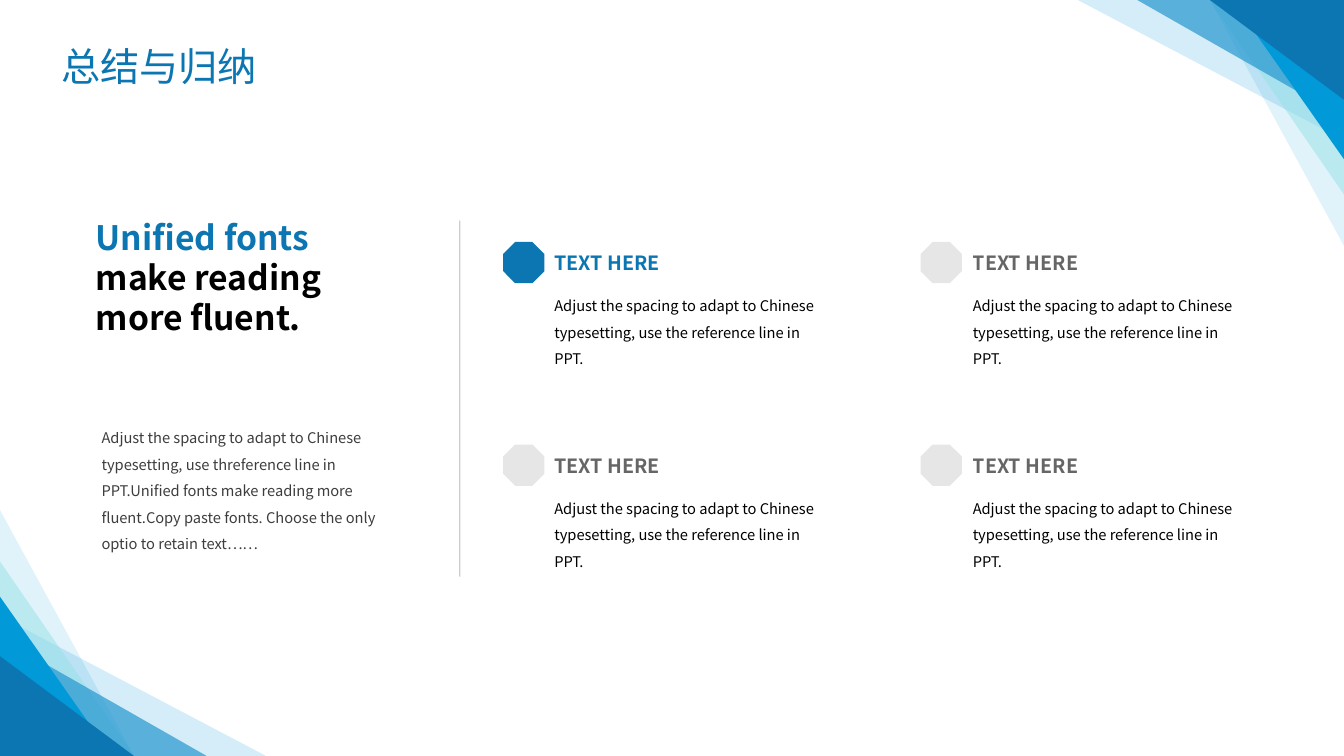
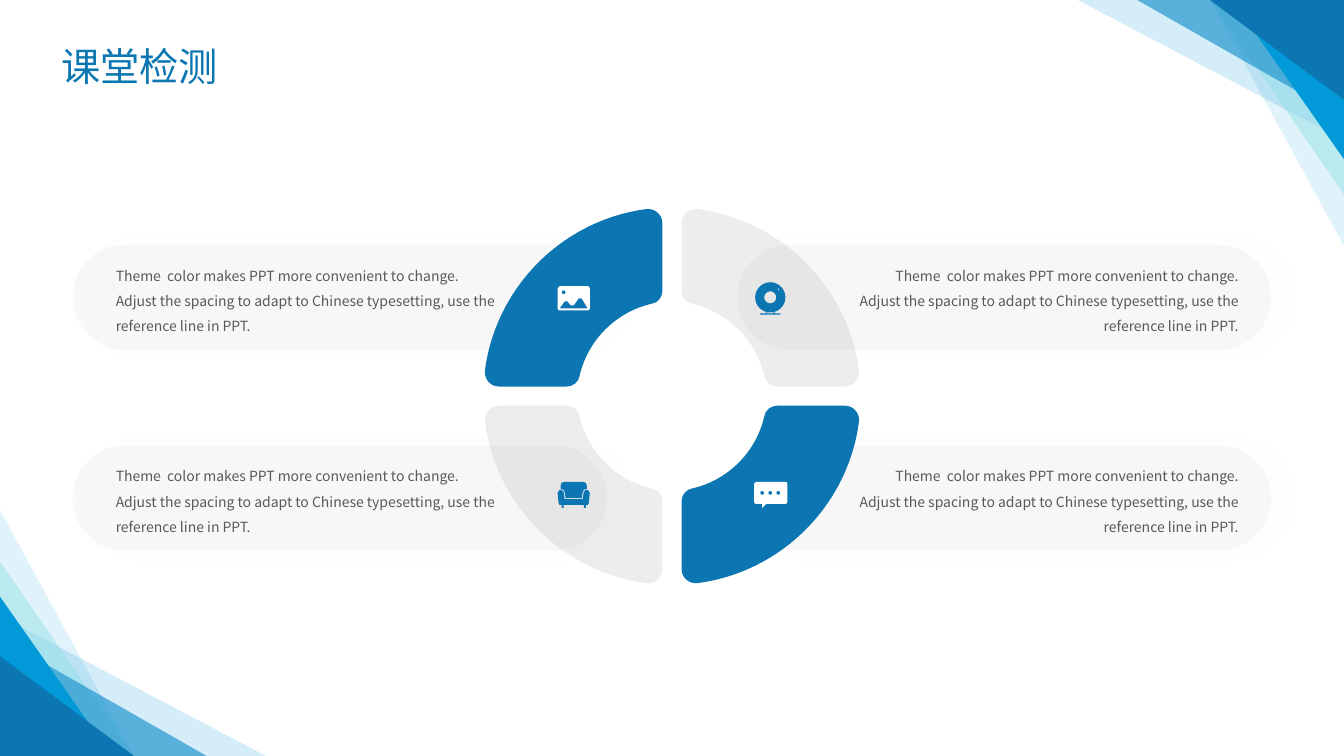
from dataclasses import dataclass
from itertools import product

from lxml import etree
from pptx import Presentation
from pptx.dml.color import RGBColor
from pptx.enum.shapes import MSO_CONNECTOR, MSO_SHAPE
from pptx.enum.text import MSO_AUTO_SIZE, PP_ALIGN
from pptx.oxml.ns import qn
from pptx.util import Inches, Pt

LEFT, RIGHT, JUSTIFY = PP_ALIGN.LEFT, PP_ALIGN.RIGHT, PP_ALIGN.JUSTIFY
TRIANGLE, OCTAGON = MSO_SHAPE.RIGHT_TRIANGLE, MSO_SHAPE.OCTAGON
PILL, STRAIGHT = MSO_SHAPE.ROUNDED_RECTANGLE, MSO_CONNECTOR.STRAIGHT
FIT_SHAPE = MSO_AUTO_SIZE.SHAPE_TO_FIT_TEXT
WIDTH, HEIGHT = 13.33, 7.5


@dataclass(frozen=True)
class Theme:
    """Colours are (hex, opacity in percent); sizes are points."""
    font: str = "Noto Sans CJK SC"
    blue: tuple = ("0C76B2", 100)
    black: tuple = ("000000", 100)
    white: tuple = ("FFFFFF", 100)
    gray_text: tuple = ("595959", 100)
    soft_text: tuple = ("0D0D0D", 80)
    muted_heading: tuple = ("000000", 60)
    muted_mark: tuple = ("0D0D0D", 10)
    rule: tuple = ("0D0D0D", 20)
    pill: tuple = ("808080", 5)
    muted_segment: tuple = ("808080", 14)
    shadow: tuple = ("A6A6A6", 20)
    title: float = 28
    headline: float = 24
    heading: float = 14
    body: float = 10.5
    note: float = 10
    loose: float = 1.5


THEME = Theme()

# Corner triangles, back to front: width, height, colour
CORNER = [
    (1.33, 2.44, ("0299D8", 12)),
    (2.64, 1.39, ("0299D8", 17)),
    (1.33, 1.93, ("95E1E7", 50)),
    (2.05, 1.17, ("2094CE", 68)),
    (1.11, 1.58, ("0299D8", 100)),
    (1.33, 0.99, THEME.blue),
]

SUMMARY = {
    "title": "总结与归纳",
    "headline": [("Unified fonts", THEME.blue),
                 ("make reading more fluent.", THEME.black)],
    "intro": "Adjust the spacing to adapt to Chinese typesetting, use threference "
             "line in PPT.Unified fonts make reading more fluent.Copy paste fonts. "
             "Choose the only optio to retain text……",
    "point": ("TEXT HERE", "Adjust the spacing to adapt to Chinese typesetting, "
                           "use the reference line in PPT."),
}
QUIZ = {
    "title": "课堂检测",
    "note": ["Theme  color makes PPT more convenient to change.",
             "Adjust the spacing to adapt to Chinese typesetting, "
             "use the reference line in PPT."],
}


# A contour is a list of pieces: one point (line) or three points (cubic curve)
def polygon(*points):
    return [[point] for point in points]


def mirrored(*half):
    """Close a left half outline with its reflection across x = 0."""
    return polygon(*half, *[(-x, y) for x, y in reversed(half)])


def rounded(x, y, width, height, radius):
    right, bottom, pull = x + width, y + height, 0.45 * radius
    return [
        [(x + radius, y)],
        [(right - radius, y)],
        [(right - pull, y), (right, y + pull), (right, y + radius)],
        [(right, bottom - radius)],
        [(right, bottom - pull), (right - pull, bottom), (right - radius, bottom)],
        [(x + radius, bottom)],
        [(x + pull, bottom), (x, bottom - pull), (x, bottom - radius)],
        [(x, y + radius)],
        [(x, y + pull), (x + pull, y), (x + radius, y)],
    ]


def circle(x, y, radius):
    outline = rounded(x - radius, y - radius, 2 * radius, 2 * radius, radius)
    return outline[:1] + [piece for piece in outline if len(piece) == 3]


# Lower right ring segment, in inches from its inner corner
SEGMENT = [
    [(0, 0.95)],
    [(0, 1.62)],
    [(0, 1.71), (0.08, 1.77), (0.16, 1.76)],
    [(0.99, 1.65), (1.65, 0.99), (1.76, 0.16)],
    [(1.77, 0.08), (1.71, 0), (1.62, 0)],
    [(0.95, 0)],
    [(0.89, 0), (0.83, 0.04), (0.82, 0.11)],
    [(0.74, 0.46), (0.46, 0.74), (0.11, 0.82)],
    [(0.04, 0.83), (0, 0.89), (0, 0.95)],
]

# Icon outlines, in inches from the centre of each icon
PHOTO = [
    rounded(-0.16, -0.12, 0.32, 0.24, 0.02),
    polygon((-0.14, 0.1), (-0.09, 0.03), (-0.06, 0.03), (-0.03, 0.07), (0, 0.07),
            (0.05, 0), (0.08, 0), (0.14, 0.1)),
    circle(-0.1, -0.06, 0.02),
]
WEBCAM = [
    circle(0, -0.01, 0.15),
    circle(0, -0.01, 0.06),
    circle(0.08, -0.09, 0.01),
    mirrored((-0.1, 0.16), (-0.1, 0.15), (-0.05, 0.15), (-0.04, 0.14),
             (-0.03, 0.14), (-0.04, 0.15)),
]
SOFA = [
    mirrored((-0.1, 0.1), (-0.1, 0.13), (-0.12, 0.13), (-0.12, 0.1), (-0.14, 0.1),
             (-0.15, 0.08), (-0.16, -0.02), (-0.14, -0.05), (-0.12, -0.05),
             (-0.1, -0.03), (-0.09, 0.04)),
    mirrored((-0.08, 0.03), (-0.09, -0.03), (-0.1, -0.05), (-0.13, -0.06),
             (-0.13, -0.09), (-0.12, -0.12), (-0.09, -0.13)),
]
CHAT = [
    rounded(-0.16, -0.13, 0.33, 0.22, 0.02),
    polygon((-0.08, 0.09), (-0.08, 0.13), (-0.04, 0.09)),
    *[circle(x, -0.02, 0.02) for x in (-0.08, 0, 0.08)],
]

# Column, row, segment colour, icon, icon colour
QUADRANTS = [
    (0, 0, THEME.blue, PHOTO, THEME.white),
    (1, 0, THEME.muted_segment, WEBCAM, THEME.blue),
    (0, 1, THEME.muted_segment, SOFA, THEME.blue),
    (1, 1, THEME.blue, CHAT, THEME.white),
]


def paint(fill, element, colour):
    """Fill with a colour and put its opacity on the element's first colour."""
    value, opacity = colour
    fill.solid()
    fill.fore_color.rgb = RGBColor.from_string(value)
    if opacity < 100:
        node = element.find(".//" + qn("a:srgbClr"))
        etree.SubElement(node, qn("a:alpha"), val=str(opacity * 1000))


def finish(shape, colour):
    shape.shadow.inherit = False
    paint(shape.fill, shape.element, colour)
    shape.line.fill.background()
    return shape


def add_preset(page, preset, x, y, width, height, colour):
    shape = page.shapes.add_shape(preset, *map(Inches, (x, y, width, height)))
    return finish(shape, colour)


def bend(shape, contours):
    """Join the three line segments of each curved piece into one cubic curve."""
    segments = iter(list(shape.element.iter(qn("a:lnTo"))))
    for piece in (piece for contour in contours for piece in contour[1:]):
        first, *others = [next(segments) for _ in piece]
        if others:
            first.tag = qn("a:cubicBezTo")
        for other in others:
            first.append(other[0])
            other.getparent().remove(other)


def add_outline(page, contours, x, y, colour, side=1, level=1):
    """Draw closed contours around x, y; side or level -1 reflects them."""
    builder = None
    for contour in contours:
        start, *points = [(Inches(x + side * dx), Inches(y + level * dy))
                          for piece in contour for dx, dy in piece]
        if builder:
            builder.move_to(*start)
        else:
            builder = page.shapes.build_freeform(*start)
        builder.add_line_segments(points, close=True)
    shape = builder.convert_to_shape()
    bend(shape, contours)
    finish(shape, colour)


def add_text(page, lines, x, y, width, height, *, size, colour=THEME.black,
             bold=False, align=LEFT, spacing=None):
    """Lines are strings, or (string, colour) pairs, one for each paragraph."""
    box = page.shapes.add_textbox(*map(Inches, (x, y, width, height)))
    frame = box.text_frame
    frame.word_wrap = True
    frame.auto_size = FIT_SHAPE
    for i, line in enumerate(lines):
        text, line_colour = (line, colour) if isinstance(line, str) else line
        para = frame.add_paragraph() if i else frame.paragraphs[0]
        para.alignment = align
        para.line_spacing = spacing
        span = para.add_run()
        span.text = text
        span.font.size, span.font.bold = Pt(size), bold
        span.font.name = THEME.font
        paint(span.font.fill, span._r, line_colour)
        etree.SubElement(span._r.rPr, qn("a:ea"), typeface=THEME.font)


def add_title(page, text):
    add_text(page, [text], 0.51, 0.37, 2.32, 0.57, size=THEME.title,
             colour=THEME.blue, align=JUSTIFY)


def add_rule(page, x, top, bottom):
    rule = page.shapes.add_connector(STRAIGHT, *map(Inches, (x, top, x, bottom)))
    rule.line.width = Pt(1)
    paint(rule.line.fill, rule.element, THEME.rule)
    etree.SubElement(rule.element.spPr, qn("a:effectLst"))


def cast_shadow(shape):
    value, opacity = THEME.shadow
    effects = shape.element.spPr.find(qn("a:effectLst"))
    shadow = etree.SubElement(effects, qn("a:outerShdw"), blurRad=str(Pt(20)),
                              dist=str(Pt(10)), dir="0", algn="l", rotWithShape="0")
    node = etree.SubElement(shadow, qn("a:srgbClr"), val=value)
    etree.SubElement(node, qn("a:alpha"), val=str(opacity * 1000))


def decorate_layout(layout, page):
    """Draw both corners on the page, then move them to the shared layout."""
    for holder in list(layout.placeholders):
        layout.shapes.element.remove(holder.element)
    for top_right in (False, True):
        for width, height, colour in CORNER:
            x, y = (WIDTH - width, 0) if top_right else (0, HEIGHT - height)
            triangle = add_preset(page, TRIANGLE, x, y, width, height, colour)
            triangle.rotation = 180 if top_right else 0
            layout.shapes.element.append(triangle.element)


def build_summary(page):
    add_title(page, SUMMARY["title"])
    add_text(page, SUMMARY["headline"], 0.85, 2.1, 3.31, 1.31,
             size=THEME.headline, bold=True)
    add_text(page, [SUMMARY["intro"]], 0.91, 4.12, 3, 1.39, size=THEME.body,
             colour=THEME.soft_text, spacing=THEME.loose)
    add_rule(page, 4.56, 2.19, 5.72)
    heading, body = SUMMARY["point"]
    mark = 0.41
    for row, column in product(range(2), range(2)):
        mark_x, text_x = 4.99 + 4.14 * column, 5.4 + 4.15 * column
        y = 2.4 + 2.01 * row
        active = row == column == 0
        add_text(page, [body], text_x, y + mark, 2.9, 0.9,
                 size=THEME.body, spacing=THEME.loose)
        add_text(page, [heading], text_x, y + 0.04, 1.76, 0.34, bold=True,
                 size=THEME.heading,
                 colour=THEME.blue if active else THEME.muted_heading)
        add_preset(page, OCTAGON, mark_x, y, mark, mark,
                   THEME.blue if active else THEME.muted_mark)


def build_quiz(page):
    add_title(page, QUIZ["title"])
    center_x, center_y, gap, row_step = WIDTH / 2, 3.93, 0.19, 1.99
    for column, row, *_ in reversed(QUADRANTS):
        pill = add_preset(page, PILL, 0.72 + 6.59 * column, 2.43 + row_step * row,
                          5.3, 1.04, THEME.pill)
        pill.adjustments[0] = 0.5
        cast_shadow(pill)
    for column, row, colour, *_ in QUADRANTS:
        side, level = 2 * column - 1, 2 * row - 1
        add_outline(page, [SEGMENT], center_x + side * gap / 2,
                    center_y + level * gap / 2, colour, side, level)
    for column, row, _, icon, colour in QUADRANTS:
        add_outline(page, icon, 5.69 + 1.95 * column, 2.96 + 1.95 * row, colour)
    for column, row, *_ in QUADRANTS:
        add_text(page, QUIZ["note"], 1.05 + 7.19 * column, 2.52 + row_step * row,
                 4.14, 0.86, size=THEME.note, colour=THEME.gray_text,
                 spacing=THEME.loose, align=RIGHT if column else LEFT)


def main():
    deck = Presentation()
    deck.slide_width, deck.slide_height = Inches(WIDTH), Inches(HEIGHT)
    blank = deck.slide_layouts[6]
    summary, quiz = (deck.slides.add_slide(blank) for _ in range(2))
    decorate_layout(blank, summary)
    build_summary(summary)
    build_quiz(quiz)
    deck.save("out.pptx")


if __name__ == "__main__":
    main()
